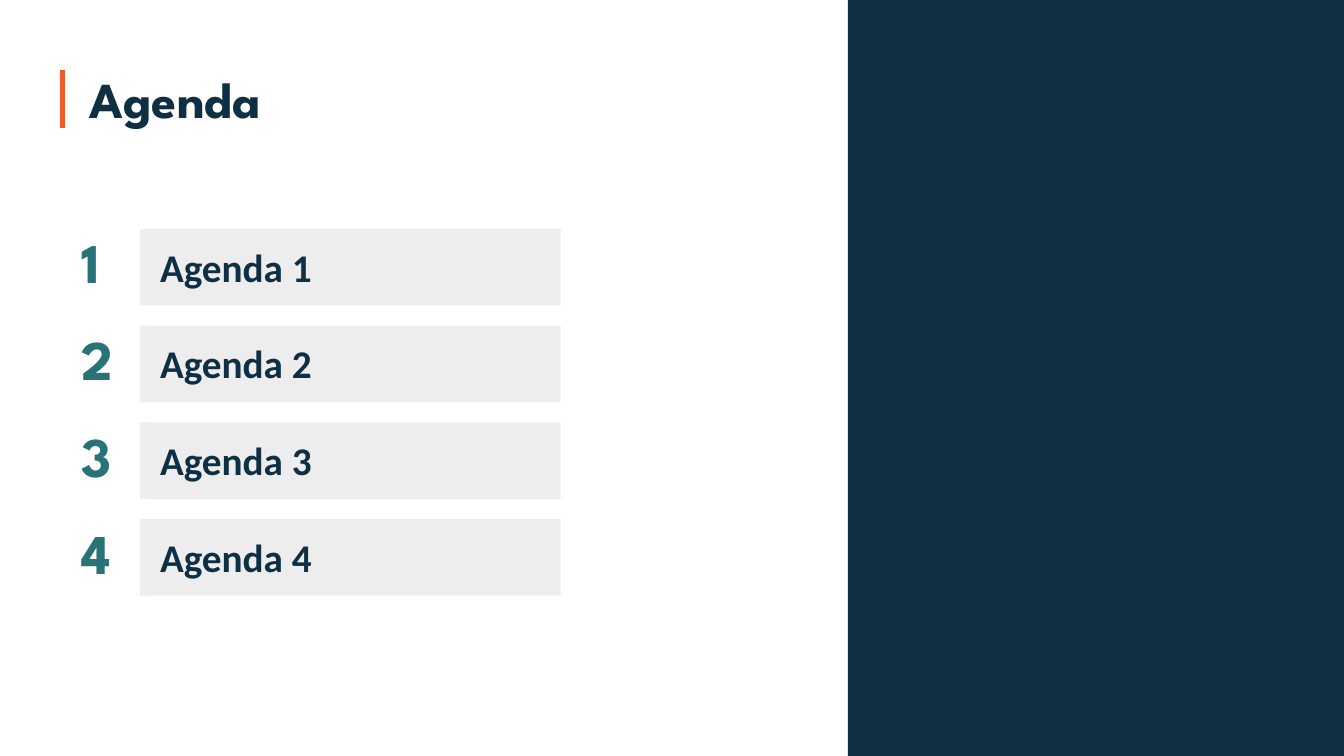
from lxml.etree import SubElement
from pptx import Presentation
from pptx.dml.color import RGBColor
from pptx.enum.shapes import MSO_CONNECTOR, MSO_SHAPE
from pptx.enum.text import MSO_ANCHOR, MSO_AUTO_SIZE
from pptx.oxml.ns import qn
from pptx.util import Pt

PX = 9144  # EMU per px, 100 px to the inch
PAGE_WIDTH, PAGE_HEIGHT = 1333, 750

NAVY = RGBColor(0x0F, 0x2F, 0x43)
TEAL = RGBColor(0x28, 0x72, 0x78)
ORANGE = RGBColor(0xF1, 0x5B, 0x28)
SLATE = RGBColor(0x55, 0x55, 0x59)
LIGHT_GREY = RGBColor(0xEE, 0xEE, 0xEE)

HEADING_FONT = "League Spartan"
BODY_FONT = "Calibri"

AGENDA = ["Agenda 1", "Agenda 2", "Agenda 3", "Agenda 4"]


def scaled(*lengths):
    return [length * PX for length in lengths]


def add_rectangle(page, left, top, width, height, color, opacity=100):
    rectangle = page.shapes.add_shape(
        MSO_SHAPE.RECTANGLE, *scaled(left, top, width, height))
    rectangle.shadow.inherit = False
    rectangle.fill.solid()
    rectangle.fill.fore_color.rgb = color
    rectangle.line.fill.background()
    if opacity < 100:
        color_element = rectangle._element.spPr.find(qn("a:solidFill"))[0]
        SubElement(color_element, qn("a:alpha"), val=str(opacity * 1000))


def add_text(page, left, top, width, height, text, size, font, color):
    box = page.shapes.add_textbox(*scaled(left, top, width, height))
    frame = box.text_frame
    frame.word_wrap = True
    span = frame.paragraphs[0].add_run()
    span.text = text
    span.font.size = Pt(size)
    span.font.name = font
    span.font.bold = True
    span.font.color.rgb = color
    return frame


def add_title(page, left, top, width, height):
    frame = add_text(page, left + 17, top, width - 17, height,
                     "Agenda", 36, HEADING_FONT, NAVY)
    frame.vertical_anchor = MSO_ANCHOR.MIDDLE
    accent = page.shapes.add_connector(
        MSO_CONNECTOR.STRAIGHT,
        *scaled(left, top + 102, left, top + 44))
    accent.line.color.rgb = ORANGE
    accent.line.width = Pt(3)
    SubElement(accent._element.spPr, qn("a:effectLst"))


def add_agenda_row(page, left, top, width, height, number, label):
    bar_left = left + 74
    add_rectangle(page, bar_left, top, width - 74, height, SLATE, opacity=10)
    add_rectangle(page, bar_left - 6, top, 10, height, LIGHT_GREY)
    for frame in (
        add_text(page, left, top - 6, 67, 77,
                 str(number), 40, HEADING_FONT, TEAL),
        add_text(page, bar_left + 4, top + 9, 384, 57,
                 label, 28, BODY_FONT, NAVY),
    ):
        frame.auto_size = MSO_AUTO_SIZE.SHAPE_TO_FIT_TEXT


def add_agenda(page, left, top, width, row_height, row_pitch):
    for index, label in enumerate(AGENDA):
        add_agenda_row(page, left, top + index * row_pitch, width,
                       row_height, index + 1, label)


def main():
    deck = Presentation()
    deck.slide_width, deck.slide_height = scaled(PAGE_WIDTH, PAGE_HEIGHT)
    page = deck.slides.add_slide(deck.slide_layouts[6])
    add_rectangle(page, 841, 0, PAGE_WIDTH - 841, PAGE_HEIGHT, NAVY)
    add_title(page, 62, 25, 1179, 145)
    add_agenda(page, 71, 227, 485, row_height=76, row_pitch=96)
    deck.save("out.pptx")


if __name__ == "__main__":
    main()
